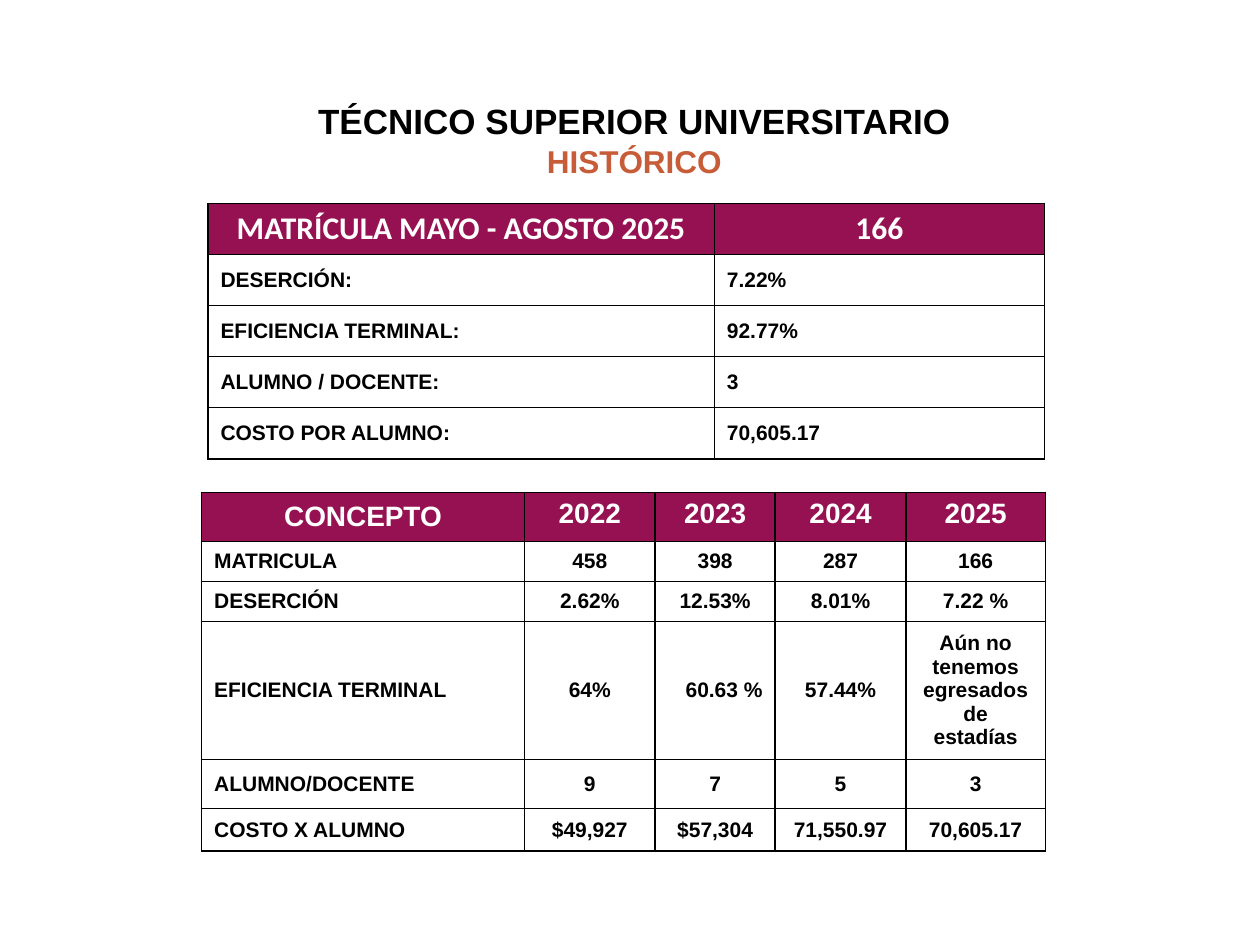
from pptx import Presentation
from pptx.dml.color import RGBColor
from pptx.enum.text import MSO_ANCHOR, MSO_AUTO_SIZE, PP_ALIGN
from pptx.oxml import parse_xml
from pptx.oxml.ns import nsdecls
from pptx.util import Pt

# Content
TITLE = [
    ("TÉCNICO SUPERIOR UNIVERSITARIO", 20, "000000"),
    ("HISTÓRICO", 18, "C65D38"),
]
ENROLMENT = [
    ("MATRÍCULA MAYO - AGOSTO 2025", "166"),
    ("DESERCIÓN:", "7.22%"),
    ("EFICIENCIA TERMINAL:", "92.77%"),
    ("ALUMNO / DOCENTE:", "3"),
    ("COSTO POR ALUMNO:", "70,605.17"),
]
HISTORY = [
    ("CONCEPTO", "2022", "2023", "2024", "2025"),
    ("MATRICULA", "458", "398", "287", "166"),
    ("DESERCIÓN", "2.62%", "12.53%", "8.01%", "7.22 %"),
    ("EFICIENCIA TERMINAL", "64%", "60.63 %", "57.44%",
     "Aún no tenemos egresados de estadías"),
    ("ALUMNO/DOCENTE", "9", "7", "5", "3"),
    ("COSTO X ALUMNO", "$49,927", "$57,304", "71,550.97", "70,605.17"),
]

# Formats
WINE, WHITE, BLACK = "961151", "FFFFFF", "000000"
BODY = dict(name="Arial", size=Pt(12), bold=True)
ENROLMENT_HEAD = dict(name="Calibri", size=Pt(18), bold=True)
HISTORY_HEAD = dict(name="Arial", size=Pt(16), bold=True)


def rgb(value):
    return RGBColor.from_string(value)


def set_font(font, values, color):
    for key, value in values.items():
        setattr(font, key, value)
    font.color.rgb = rgb(color)


def add_borders(cell):
    tcPr = cell._tc.get_or_add_tcPr()
    for i, side in enumerate(("lnL", "lnR", "lnT", "lnB")):
        tcPr.insert(i, parse_xml(
            f'<a:{side} {nsdecls("a")} w="{Pt(1)}"><a:solidFill>'
            f'<a:srgbClr val="{BLACK}"/></a:solidFill></a:{side}>'))


def add_table(s, rows, left, top, widths, heights, head, value_align):
    table = s.shapes.add_table(
        len(rows), len(widths), Pt(left), Pt(top),
        Pt(sum(widths)), Pt(sum(heights))).table
    for col, width in zip(table.columns, widths):
        col.width = Pt(width)
    for row, height in zip(table.rows, heights):
        row.height = Pt(height)
    for i, texts in enumerate(rows):
        for j, text in enumerate(texts):
            cell = table.cell(i, j)
            cell.fill.solid()
            cell.fill.fore_color.rgb = rgb(WHITE if i else WINE)
            add_borders(cell)
            cell.vertical_anchor = MSO_ANCHOR.MIDDLE
            p = cell.text_frame.paragraphs[0]
            if i == 0:
                p.alignment = PP_ALIGN.CENTER
            else:
                p.alignment = value_align if j else PP_ALIGN.LEFT
            r = p.add_run()
            r.text = text
            set_font(r.font, BODY if i else head, BLACK if i else WHITE)
    return table


prs = Presentation()
prs.slide_width, prs.slide_height = Pt(720), Pt(540)
s = prs.slides.add_slide(prs.slide_layouts[5])

# Title
title = s.shapes.title
title.left, title.top, title.width, title.height = map(Pt, (172.8, 53.3, 379.4, 53.3))
tf = title.text_frame
tf.word_wrap = False
tf.auto_size = MSO_AUTO_SIZE.NONE
tf.vertical_anchor = MSO_ANCHOR.TOP
for i, (text, size, color) in enumerate(TITLE):
    p = tf.add_paragraph() if i else tf.paragraphs[0]
    p.alignment = PP_ALIGN.CENTER
    r = p.add_run()
    r.text = text
    set_font(r.font, dict(name="Arial", size=Pt(size), bold=True), color)

# Current enrolment
add_table(s, ENROLMENT, 118.8, 116.2, [289.4, 188.6], [29.2] * 5,
          ENROLMENT_HEAD, PP_ALIGN.LEFT)

# Yearly history: year headings sit at the top, one value sits at the right
history = add_table(s, HISTORY, 115.2, 281.3, [184.5, 74.7, 68.6, 74.7, 79.7],
                    [28, 22.9, 22.9, 79, 27.9, 24.5],
                    HISTORY_HEAD, PP_ALIGN.CENTER)
for j in range(1, 5):
    history.cell(0, j).vertical_anchor = MSO_ANCHOR.TOP
history.cell(3, 2).text_frame.paragraphs[0].alignment = PP_ALIGN.RIGHT

prs.save("out.pptx")
